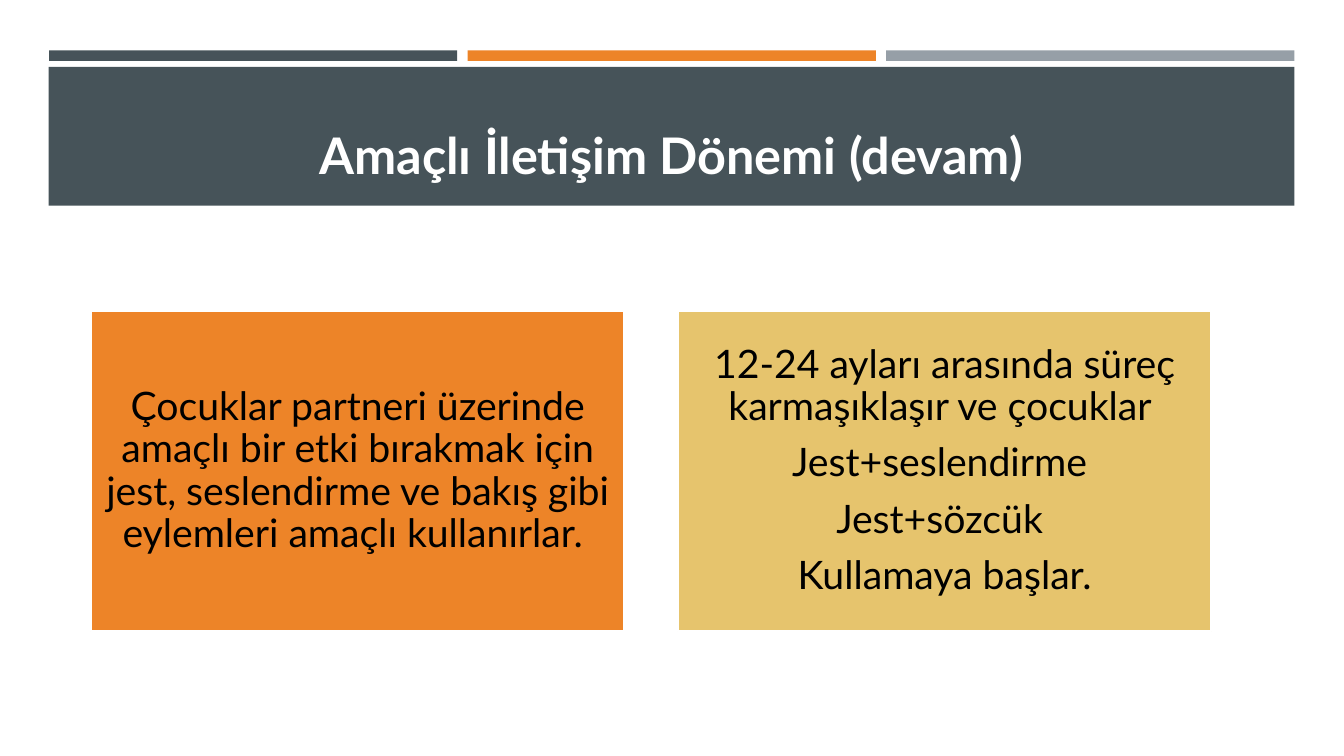
from dataclasses import dataclass

import pptx
import pptx.dml.color
import pptx.enum.shapes
import pptx.enum.text
import pptx.util

Pt = pptx.util.Pt
FONT = "Lato"
COLORS = {
    "slate": "465359",
    "orange": "ED8428",
    "gray": "969FA7",
    "sand": "E6C46D",
    "white": "FFFFFF",
    "black": "000000",
}


@dataclass
class Block:
    left: float
    top: float
    width: float
    height: float
    fill: str
    line: str | None = None
    lines: tuple[str, ...] = ()


def rgb(name: str) -> pptx.dml.color.RGBColor:
    return pptx.dml.color.RGBColor.from_string(COLORS[name])


def add_run(p, text: str, size: float, color: str, bold: bool = False) -> None:
    p.alignment = pptx.enum.text.PP_ALIGN.CENTER
    r = p.add_run()
    r.text = text
    r.font.name = FONT
    r.font.size = Pt(size)
    r.font.bold = bold
    r.font.color.rgb = rgb(color)


def add_block(s, block: Block) -> None:
    sp = s.shapes.add_shape(
        pptx.enum.shapes.MSO_SHAPE.RECTANGLE,
        Pt(block.left), Pt(block.top), Pt(block.width), Pt(block.height),
    )
    sp.shadow.inherit = False
    sp.fill.solid()
    sp.fill.fore_color.rgb = rgb(block.fill)
    if block.line:
        sp.line.color.rgb = rgb(block.line)
        sp.line.width = Pt(1.75)
    else:
        sp.line.fill.background()

    tf = sp.text_frame
    tf.word_wrap = True
    tf.vertical_anchor = pptx.enum.text.MSO_ANCHOR.MIDDLE
    tf.margin_left = tf.margin_right = tf.margin_top = tf.margin_bottom = Pt(8.4)
    for i, text in enumerate(block.lines):
        p = tf.add_paragraph() if i else tf.paragraphs[0]
        p.line_spacing = 0.9
        p.space_after = Pt(9.8)
        add_run(p, text, 28, "black")


def format_title(s, text: str) -> None:
    title = s.shapes.title
    title.left, title.top, title.width, title.height = Pt(45.4), Pt(57.6), Pt(868.3), Pt(77.8)
    tf = title.text_frame
    tf.word_wrap = True
    tf.auto_size = pptx.enum.text.MSO_AUTO_SIZE.NONE
    tf.vertical_anchor = pptx.enum.text.MSO_ANCHOR.BOTTOM
    add_run(tf.paragraphs[0], text, 36, "white", bold=True)
    # Bring the title in front of its band
    title.element.getparent().append(title.element)


def main() -> None:
    prs = pptx.Presentation()
    prs.slide_width, prs.slide_height = Pt(960), Pt(540)
    s = prs.slides.add_slide(prs.slide_layouts[5])

    # Three accent bars
    for i, color in enumerate(("slate", "orange", "gray")):
        add_block(s, Block(35 + 299 * i, 36, 291.6, 7.5, color))

    # Title band
    add_block(s, Block(34.8, 47.7, 889.7, 99.2, "slate"))
    format_title(s, "Amaçlı İletişim Dönemi (devam)")

    # Two content cards
    cards = (
        ("orange", (
            "Çocuklar partneri üzerinde amaçlı bir etki bırakmak için jest, "
            "seslendirme ve bakış gibi eylemleri amaçlı kullanırlar. ",
        )),
        ("sand", (
            "12-24 ayları arasında süreç karmaşıklaşır ve çocuklar ",
            "Jest+seslendirme ",
            "Jest+sözcük ",
            "Kullamaya başlar.",
        )),
    )
    for i, (color, lines) in enumerate(cards):
        add_block(s, Block(65 + 419.2 * i, 222.2, 381, 228.6, color, "white", lines))

    prs.save("out.pptx")


if __name__ == "__main__":
    main()
